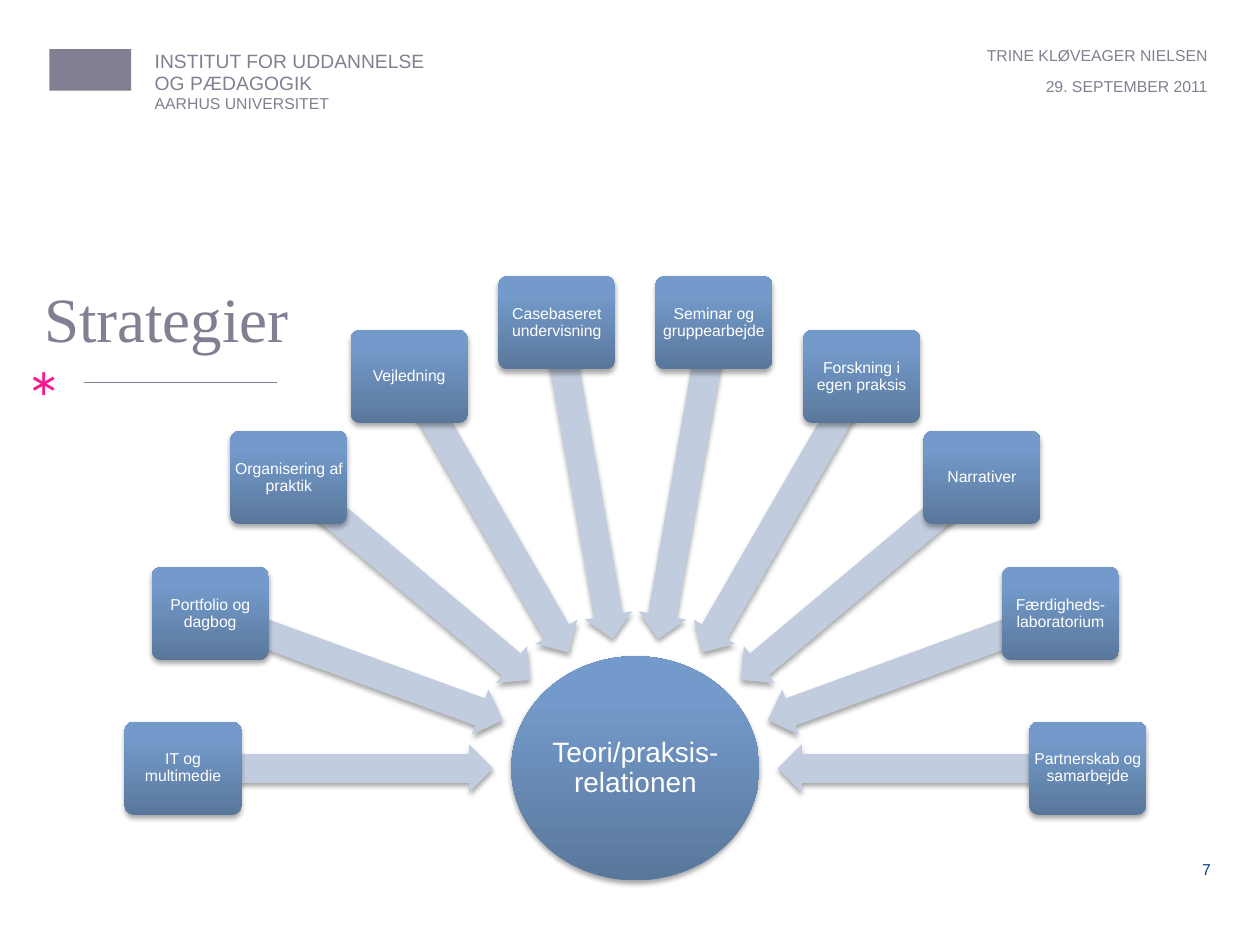
"""Build the "Strategier" slide: ten strategies in a half circle around one core."""
from math import cos, radians, sin

from lxml import etree
from pptx import Presentation
from pptx import util as u
from pptx.dml.color import RGBColor
from pptx.enum import shapes, text
from pptx.oxml.ns import qn

THEME = {
    "grey": RGBColor(0x80, 0x80, 0x92),
    "pink": RGBColor(0xF9, 0x19, 0x8E),
    "navy": RGBColor(0x03, 0x42, 0x8E),
    "white": RGBColor(0xFF, 0xFF, 0xFF),
    "arrow": RGBColor(0xC1, 0xCD, 0xDF),
    "dark": RGBColor(0x59, 0x77, 0x9B),
    "light": RGBColor(0x73, 0x9A, 0xCA),
    "small": u.Pt(9), "unit": u.Pt(11), "core": u.Pt(16), "large": u.Pt(36),
    "sans": "Arial", "serif": "Times New Roman", "star": "Montserrat",
}
ALIGN, ANCHOR, MSO = text.PP_ALIGN, text.MSO_ANCHOR, shapes.MSO_SHAPE


def write(sp, lines, color, font="sans", align=ALIGN.LEFT, anchor=ANCHOR.BOTTOM,
          spacing=1.02, margin=0):
    tf = sp.text_frame
    frame = {"word_wrap": True, "vertical_anchor": anchor}
    frame.update({f"margin_{side}": u.Cm(margin) for side in ("left", "top", "right", "bottom")})
    for name, value in frame.items():
        setattr(tf, name, value)
    for i, (line, size) in enumerate(lines):
        p = tf.add_paragraph() if i else tf.paragraphs[0]
        p.alignment, p.line_spacing = align, spacing
        r = p.add_run()
        r.text = line
        r.font.color.rgb = THEME[color]
        for name, value in {"size": THEME[size], "name": THEME[font]}.items():
            setattr(r.font, name, value)


def add_centred(kind, x, y, w, h, fill=None):
    sp = s.shapes.add_shape(kind, u.Cm(x - w / 2), u.Cm(y - h / 2), u.Cm(w), u.Cm(h))
    sp.line.fill.background()
    sp.shadow.inherit = False
    if fill:
        sp.fill.solid()
        sp.fill.fore_color.rgb = THEME[fill]
    else:
        sp.fill.gradient()
        sp.fill.gradient_angle = 90
        for stop, (pos, color) in zip(sp.fill.gradient_stops, ((0, "dark"), (0.8, "light"))):
            stop.position, stop.color.rgb = pos, THEME[color]
    return sp


prs = Presentation()
prs.slide_width, prs.slide_height = u.Cm(25.4), u.Cm(19.05)
s = prs.slides.add_slide(prs.slide_layouts[6])

add_centred(MSO.RECTANGLE, 1.82, 1.41, 1.65, 0.84, "grey")

right = {"align": ALIGN.RIGHT}
labels = [
    ((17.1, 1.52, 7.24, 0.4), [("29. SEPTEMBER 2011", "small")], "grey", right),
    ((17.1, 0.91, 7.24, 0.4), [("TRINE KLØVEAGER NIELSEN", "small")], "grey", right),
    ((3.12, 0.91, 5.66, 1.37),
     [("INSTITUT FOR UDDANNELSE OG PÆDAGOGIK", "unit"), ("AARHUS UNIVERSITET", "small")],
     "grey", {"spacing": 0.95}),
    ((0.51, 7.32, 0.86, 1.52), [("*", "large")], "pink",
     {"font": "star", "anchor": ANCHOR.TOP, "spacing": THEME["large"], "margin": 0.13}),
    ((0.89, 4.52, 23.39, 2.64), [("Strategier", "large")], "grey",
     {"font": "serif", "spacing": 0.83}),
    ((18.49, 17.32, 5.92, 0.38), [("7", "small")], "navy", {**right, "anchor": ANCHOR.TOP}),
]
for box, lines, color, style in labels:
    write(s.shapes.add_textbox(*map(u.Cm, box)), lines, color, **style)

rule = s.shapes.add_connector(shapes.MSO_CONNECTOR.STRAIGHT,
                              u.Cm(1.7), u.Cm(7.7), u.Cm(5.59), u.Cm(7.7))
rule.line.color.rgb, rule.line.width = THEME["grey"], u.Pt(0.14)
etree.SubElement(rule._element.spPr, qn("a:effectLst"))

CX, CY, RADIUS, STEP = 12.81, 15.49, 9.12, 20
centred = {"align": ALIGN.CENTER, "anchor": ANCHOR.MIDDLE, "spacing": 0.9}
core = add_centred(MSO.OVAL, CX, CY, 5, 4.52)
write(core, [("Teori/praksis-relationen", "core")], "white", **centred)
diagram = [core]

strategies = [
    "IT og multimedie", "Portfolio og dagbog", "Organisering af praktik", "Vejledning",
    "Casebaseret undervisning", "Seminar og gruppearbejde", "Forskning i egen praksis",
    "Narrativer", "Færdigheds-laboratorium", "Partnerskab og samarbejde",
]
for i, strategy in enumerate(strategies):
    angle = 180 + i * STEP
    dx, dy = cos(radians(angle)), sin(radians(angle))
    length = 6.25 + 0.23 * dy ** 2
    mid = RADIUS - length / 2
    arrow = add_centred(MSO.LEFT_ARROW, CX + mid * dx, CY + mid * dy, length, 0.97, "arrow")
    arrow.rotation = angle % 360
    arrow.adjustments[0], arrow.adjustments[1] = 0.6, 0.5
    card = add_centred(MSO.ROUNDED_RECTANGLE, CX + RADIUS * dx, CY + RADIUS * dy, 2.36, 1.88)
    card.adjustments[0] = 0.1
    write(card, [(strategy, "small")], "white", **centred)
    diagram += [arrow, card]

for sp in diagram:
    effects = sp._element.spPr.find(qn("a:effectLst"))
    shadow = etree.SubElement(effects, qn("a:outerShdw"), blurRad=str(u.Pt(3.1)),
                              dist=str(u.Pt(1.8)), dir="5400000", rotWithShape="0")
    black = etree.SubElement(shadow, qn("a:srgbClr"), val="000000")
    etree.SubElement(black, qn("a:alpha"), val="35000")

prs.save("out.pptx")
